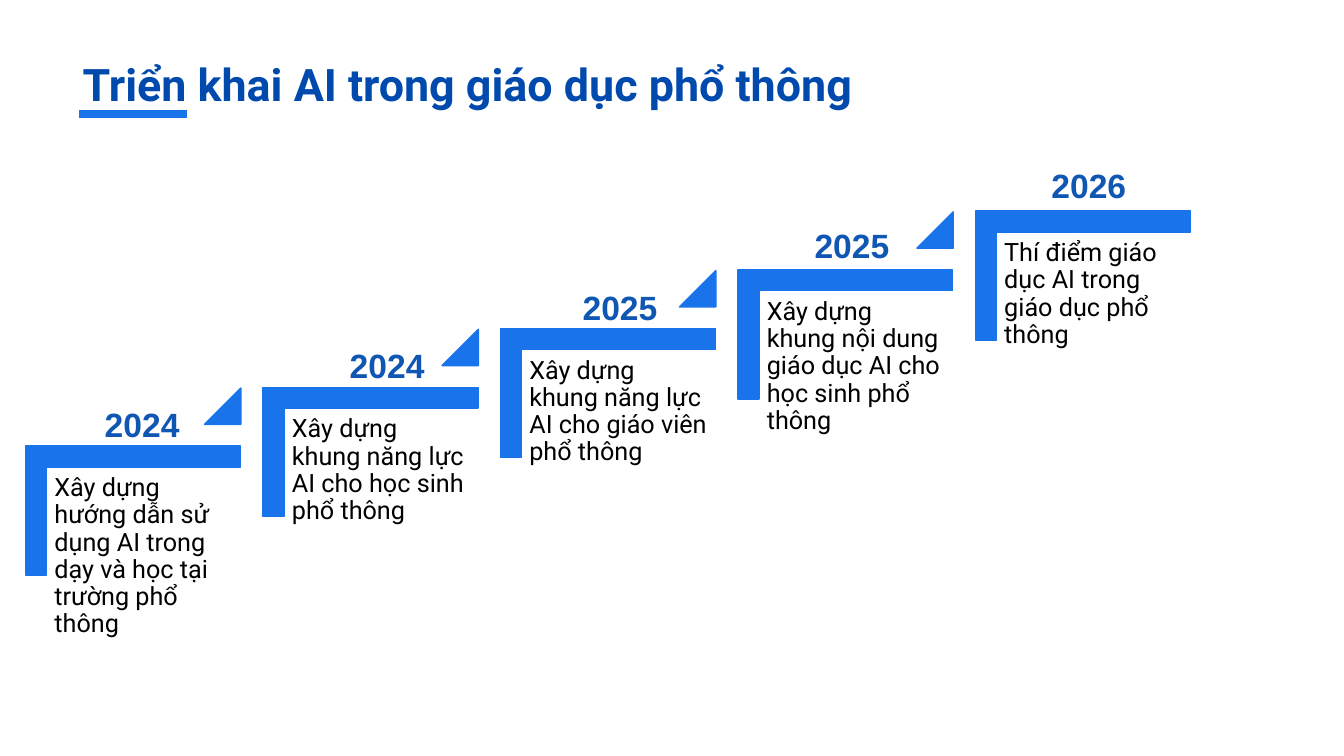
"""Build a staircase timeline of AI rollout in general education."""
from lxml.etree import SubElement
from pptx import Presentation
from pptx.dml.color import RGBColor
from pptx.enum.shapes import MSO_CONNECTOR, MSO_SHAPE
from pptx.enum.text import MSO_ANCHOR, MSO_AUTO_SIZE, PP_ALIGN
from pptx.oxml.ns import qn
from pptx.util import Inches, Pt

BLUE = "1973EB"
COLUMN = (10.1 - 0.68) / 4
ROW = (4 - 1.67) / 4


def color(value):
    return RGBColor.from_string(value)


def write(shape, text, font_name, size, text_color, bold=False, inset=None):
    frame = shape.text_frame
    frame.word_wrap = True
    frame.auto_size = MSO_AUTO_SIZE.NONE
    frame.vertical_anchor = MSO_ANCHOR.TOP
    if inset is not None:
        frame.margin_left = frame.margin_right = Inches(inset)
        frame.margin_top = frame.margin_bottom = Inches(inset)
    frame.text = text
    paragraph = frame.paragraphs[0]
    paragraph.alignment = PP_ALIGN.LEFT
    paragraph.font.name = font_name
    paragraph.font.size = Pt(size)
    paragraph.font.bold = bold
    paragraph.font.color.rgb = color(text_color)
    return paragraph


presentation = Presentation()
presentation.slide_width = Inches(13.33)
presentation.slide_height = Inches(7.5)
slide = presentation.slides.add_slide(presentation.slide_layouts[5])
shapes = slide.shapes

title = shapes.title
title.left, title.top = Inches(0.82), Inches(0.27)
title.width, title.height = Inches(8.88), Inches(0.75)
heading = write(title, "Triển khai AI trong giáo dục phổ thông",
                "Roboto", 32, "004AAD", bold=True, inset=0)
heading.line_spacing = Pt(59.7)

underline = shapes.add_connector(
    MSO_CONNECTOR.STRAIGHT, Inches(0.78), Inches(1.13), Inches(1.85), Inches(1.13))
underline.line.color.rgb = color(BLUE)
underline.line.width = Pt(6)
SubElement(underline._element.spPr, qn("a:effectLst"))

steps = [
    ("2024", 0.94, 3.96, "Xây dựng hướng dẫn sử dụng AI trong dạy và học tại trường phổ thông"),
    ("2024", 3.37, 3.37, "Xây dựng khung năng lực AI cho học sinh phổ thông"),
    ("2025", 5.68, 2.8, "Xây dựng khung năng lực AI cho giáo viên phổ thông"),
    ("2025", 7.98, 2.18, "Xây dựng khung nội dung giáo dục AI cho học sinh phổ thông"),
    ("2026", 10.33, 1.59, "Thí điểm giáo dục AI trong giáo dục phổ thông"),
]

for index, (year, year_left, year_top, description) in enumerate(steps):
    across, up = index * COLUMN, index * ROW

    corner = shapes.add_shape(MSO_SHAPE.CORNER, Inches(0.68 + across), Inches(4 - up),
                              Inches(1.28), Inches(2.13))
    corner.rotation = 90
    corner.adjustments[0] = corner.adjustments[1] = 0.161
    markers = [corner]

    if index < len(steps) - 1:
        triangle = shapes.add_shape(MSO_SHAPE.ISOSCELES_TRIANGLE, Inches(2.03 + across),
                                    Inches(3.85 - up), Inches(0.36), Inches(0.36))
        triangle.adjustments[0] = 1
        markers.append(triangle)

    for marker in markers:
        marker.shadow.inherit = False
        marker.fill.solid()
        marker.fill.fore_color.rgb = color(BLUE)
        marker.line.color.rgb = color(BLUE)
        marker.line.width = Pt(1)

    description_box = shapes.add_textbox(Inches(0.47 + across), Inches(4.64 - up),
                                         Inches(1.92), Inches(1.68))
    paragraph = write(description_box, description, "Roboto", 18, "000000", inset=0.07)
    paragraph.line_spacing = 0.9

    year_box = shapes.add_textbox(Inches(year_left), Inches(year_top), Inches(1.22), Inches(0.5))
    write(year_box, year, "Arial", 24, "1056B3", bold=True)

presentation.save("out.pptx")
